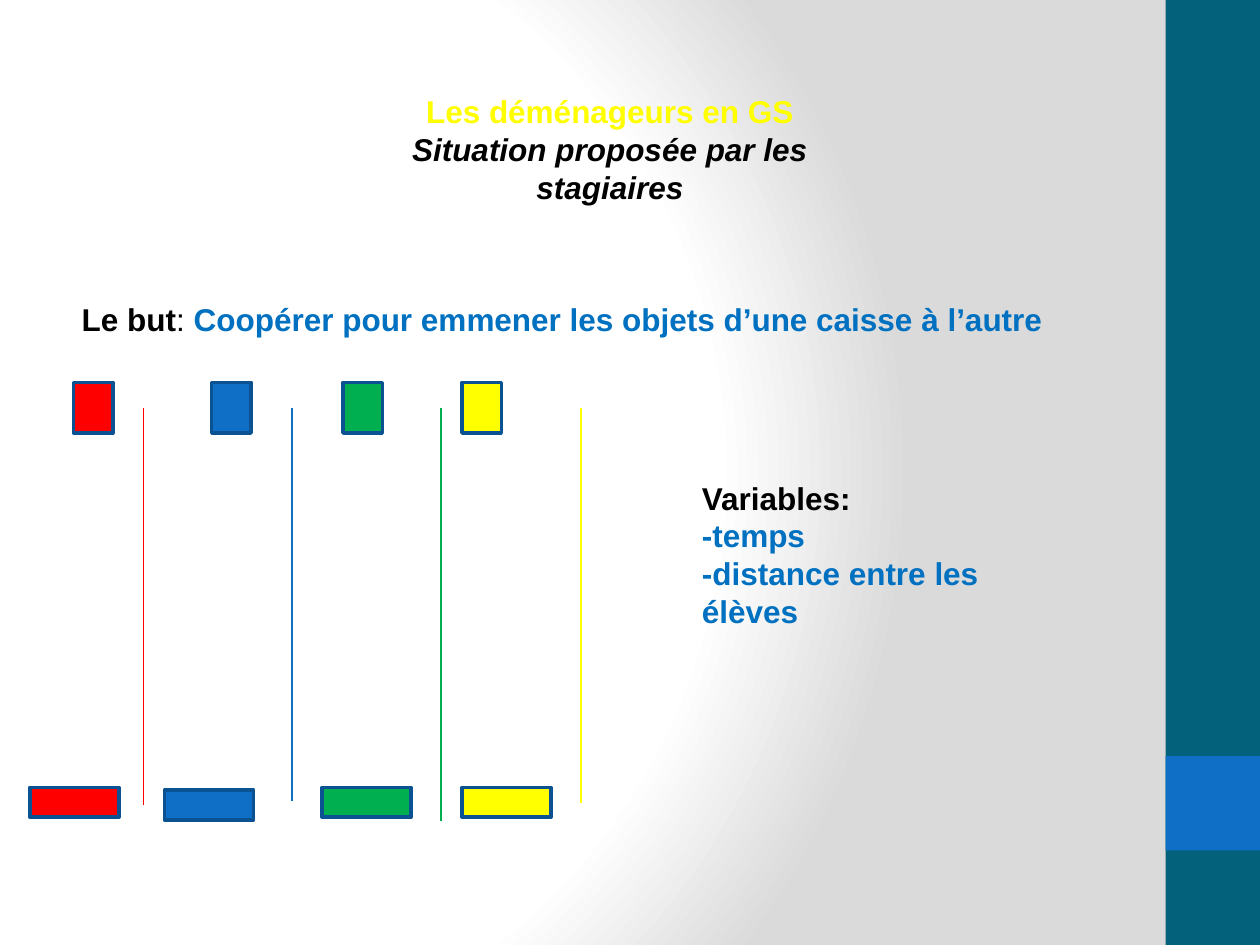
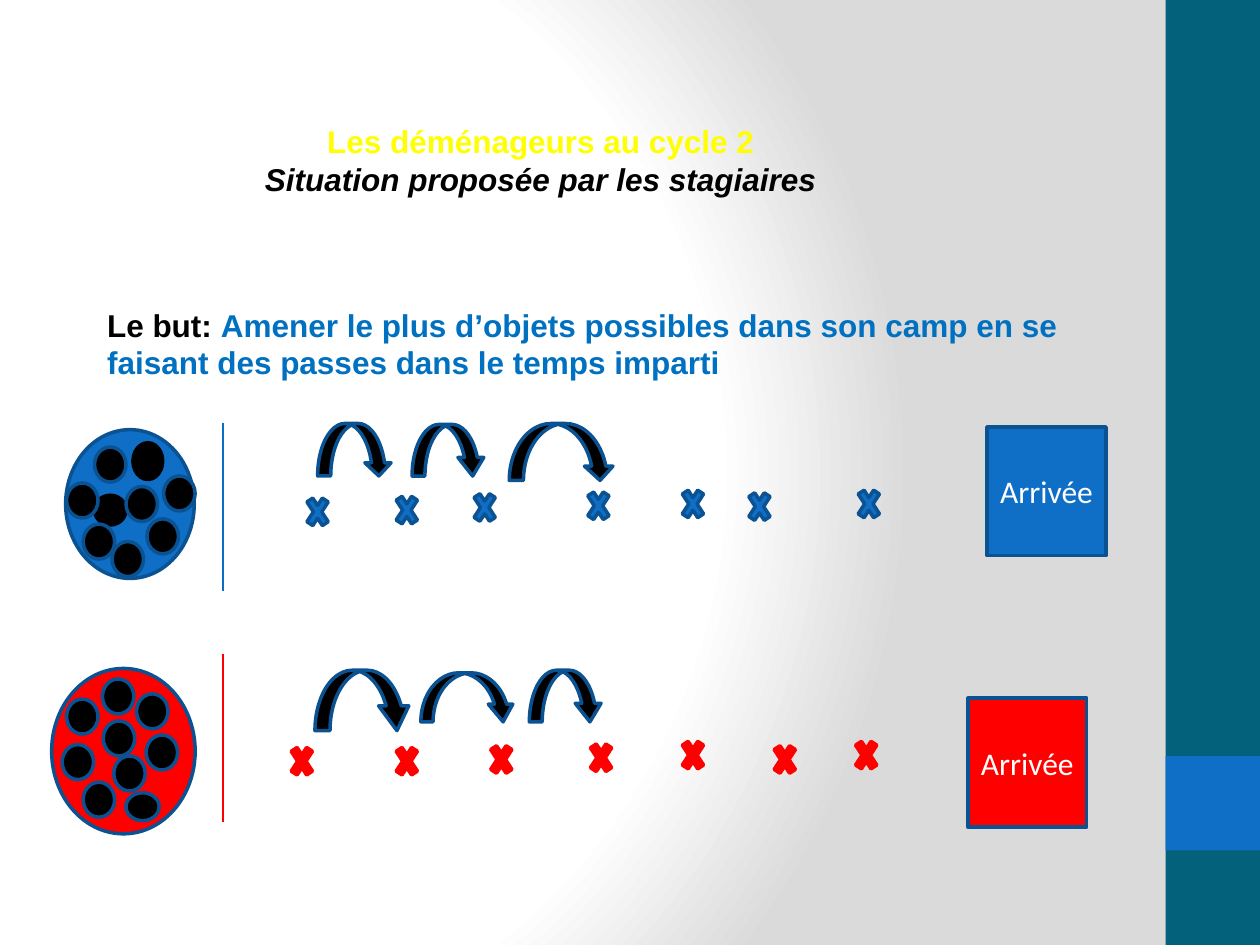
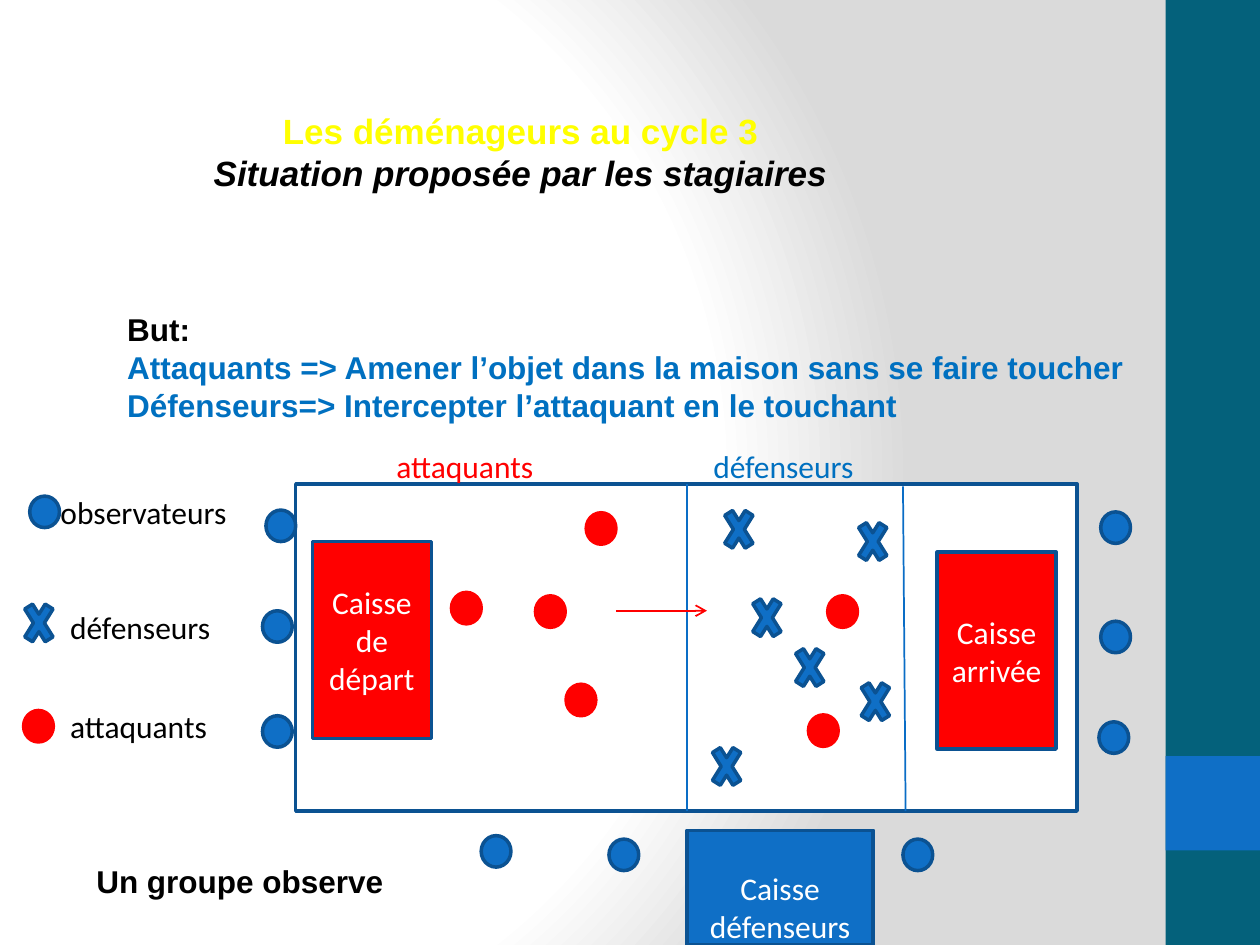
from dataclasses import dataclass, replace

from pptx import Presentation
from pptx.dml.color import RGBColor
from pptx.enum import shapes, text
from pptx.oxml import parse_xml
from pptx.oxml.ns import nsdecls, qn
from pptx.util import Pt

# Shared colours
TEAL = RGBColor(0x04, 0x61, 0x7B)
BLUE = RGBColor(0x0F, 0x6F, 0xC6)
LINE_BLUE = RGBColor(0x0A, 0x6D, 0xC6)
OUTLINE = RGBColor(0x0B, 0x52, 0x92)
TEXT_BLUE = RGBColor(0x00, 0x70, 0xC0)
RED = RGBColor(0xFF, 0x00, 0x00)
GREEN = RGBColor(0x00, 0xB0, 0x50)
YELLOW = RGBColor(0xFF, 0xFF, 0x00)
WHITE = RGBColor(0xFF, 0xFF, 0xFF)
BLACK = RGBColor(0x00, 0x00, 0x00)

BACKGROUND = f"""<a:gradFill {nsdecls('a')} rotWithShape="1"><a:gsLst>
<a:gs pos="0"><a:srgbClr val="FFFFFF"/></a:gs>
<a:gs pos="75000"><a:srgbClr val="FFFFFF"/></a:gs>
<a:gs pos="100000"><a:srgbClr val="DADADA"/></a:gs></a:gsLst>
<a:path path="circle"><a:fillToRect l="20000" t="50000" r="100000" b="50000"/></a:path>
</a:gradFill>"""

KIND = shapes.MSO_SHAPE
CENTER = text.PP_ALIGN.CENTER
SUBTITLE = "Situation proposée par les stagiaires"


@dataclass(frozen=True)
class Style:
    color: RGBColor
    font: str = "Arial"
    size: int = 18
    bold: bool = True
    italic: bool = False


STRONG = Style(BLACK)
GOAL = Style(TEXT_BLUE)
LABEL = Style(BLACK, "Calibri", bold=False)
BOX_LABEL = replace(LABEL, color=WHITE)


# Text
def write(frame, lines, align=text.PP_ALIGN.LEFT, anchor=text.MSO_ANCHOR.TOP):
    """Fill a frame; each line is a list of (words, style) runs."""
    frame.word_wrap = True
    frame.auto_size = text.MSO_AUTO_SIZE.NONE
    frame.vertical_anchor = anchor
    for number, line in enumerate(lines):
        paragraph = frame.add_paragraph() if number else frame.paragraphs[0]
        paragraph.alignment = align
        paragraph.space_before = Pt(0)
        for words, style in line:
            run = paragraph.add_run()
            run.text = words
            run.font.name, run.font.size = style.font, Pt(style.size)
            run.font.bold, run.font.italic = style.bold, style.italic
            run.font.color.rgb = style.color


def place(placeholder, box):
    (placeholder.left, placeholder.top,
     placeholder.width, placeholder.height) = map(Pt, box)


def add_title(slide, heading, box, size=18):
    place(slide.shapes.title, box)
    lines = [[(heading, Style(YELLOW, size=size))],
             [(SUBTITLE, Style(BLACK, size=size, italic=True))]]
    write(slide.shapes.title.text_frame, lines, CENTER)


def add_goal(slide, lines, box):
    goal = slide.placeholders[1]
    place(goal, box)
    write(goal.text_frame, lines)
    for paragraph in goal.text_frame.paragraphs:
        properties = paragraph._p.get_or_add_pPr()
        properties.set("marL", "0")
        properties.set("indent", "0")
        properties.append(parse_xml(f"<a:buNone {nsdecls('a')}/>"))


def add_note(slide, lines, box):
    write(slide.shapes.add_textbox(*map(Pt, box)).text_frame, lines)


# Shapes
def add_figure(slide, kind, box, fill, line=OUTLINE):
    figure = slide.shapes.add_shape(kind, *map(Pt, box))
    figure.shadow.inherit = False
    figure.fill.solid()
    figure.fill.fore_color.rgb = fill
    if line is None:
        figure.line.fill.background()
    else:
        figure.line.color.rgb = line
        figure.line.width = Pt(2)
    return figure


def add_group(slide, kind, size, corners, fill, line=OUTLINE):
    for corner in corners:
        add_figure(slide, kind, (*corner, *size), fill, line)


def add_crate(slide, box, fill, words):
    crate = add_figure(slide, KIND.RECTANGLE, box, fill)
    write(crate.text_frame, [[(word, BOX_LABEL)] for word in words],
          CENTER, text.MSO_ANCHOR.MIDDLE)
    return crate


def add_line(slide, start, end, color, arrow=False):
    line = slide.shapes.add_connector(
        shapes.MSO_CONNECTOR.STRAIGHT, *map(Pt, (*start, *end)))
    line.line.color.rgb = color
    line.line.width = Pt(1)
    properties = line.element.find(qn("p:spPr"))
    properties.append(parse_xml(f"<a:effectLst {nsdecls('a')}/>"))
    if arrow:
        line.line._get_or_add_ln().append(
            parse_xml(f'<a:tailEnd {nsdecls("a")} type="arrow"/>'))


def add_pass(slide, box, head=0.25):
    arc = add_figure(slide, KIND.CURVED_DOWN_ARROW, box, BLACK)
    arc.adjustments[2] = head


# Background and side bands, on the master
def dress_master(deck, slide):
    master = deck.slide_master
    master.background.fill.solid()
    backdrop = master.element.xpath("p:cSld/p:bg/p:bgPr")[0]
    backdrop.replace(backdrop[0], parse_xml(BACKGROUND))
    tree = master.element.xpath("p:cSld/p:spTree")[0]
    bands = (((666, 0, 54, 540), TEAL), ((666, 432, 54, 54), BLUE))
    for number, (box, color) in enumerate(bands):
        band = add_figure(slide, KIND.RECTANGLE, box, color, None).element
        band.xpath("p:nvSpPr/p:cNvPr")[0].set("id", str(100 + number))
        tree.insert(2 + number, band)


def nursery_slide(slide):
    add_title(slide, "Les déménageurs en GS", (184.5, 49, 328, 73))
    add_goal(slide, [[("Le but", STRONG), (": ", replace(STRONG, bold=False)),
                      ("Coopérer pour emmener les objets d’une caisse à l’autre", GOAL)]],
             (39.5, 168, 618, 29))
    # Lanes: colour, start crate x, end crate x and y, divider x and bottom
    lanes = ((RED, 42, 17, 450, 82, 460), (BLUE, 121, 94, 451.5, 167, 458),
             (GREEN, 196, 184, 450, 252, 469), (YELLOW, 264, 264, 450, 332, 459))
    for color, start_x, end_x, end_y, divider_x, bottom in lanes:
        add_figure(slide, KIND.RECTANGLE, (start_x, 218.5, 22.5, 29), color)
        add_figure(slide, KIND.RECTANGLE, (end_x, end_y, 51, 17), color)
        add_line(slide, (divider_x, 233), (divider_x, bottom), color)
    add_note(slide, [[("Variables:", STRONG)], [("-temps", GOAL)],
                     [("-distance entre les élèves", GOAL)]], (394, 270, 215, 94))


def cycle_two_slide(slide):
    add_title(slide, "Les déménageurs au cycle 2", (136.5, 66, 345, 51))
    add_goal(slide, [[("Le but: ", STRONG),
                      ("Amener le plus d’objets possibles dans son camp en se "
                       "faisant des passes dans le temps imparti", GOAL)]],
             (54, 171, 578, 51))
    # Arrival camps, reserves and start lines
    add_crate(slide, (564, 244, 68, 73.5), BLUE, ["Arrivée"])
    add_crate(slide, (553, 399, 68, 73.5), RED, ["Arrivée"])
    add_figure(slide, KIND.OVAL, (37.5, 245.5, 73.5, 85), BLUE)
    add_figure(slide, KIND.OVAL, (29.5, 382, 82, 94.5), RED)
    add_line(slide, (127.5, 242), (127.5, 338), LINE_BLUE)
    add_line(slide, (127.5, 374), (127.5, 470), RED)
    # Objects in the reserves
    for box in ((76, 253, 17, 21), (54, 283, 18, 17)):
        add_figure(slide, KIND.OVAL, box, BLACK, BLACK)
    blue_objects = ((84, 296.5), (64, 309.5), (38, 276), (93.5, 272),
                    (47.5, 299.5), (72, 278), (54, 255.5))
    red_objects = ((65, 432), (38, 399.5), (58.5, 388), (83.5, 420),
                   (47.5, 447), (59, 412), (78, 396.5), (35.5, 425.5))
    add_group(slide, KIND.OVAL, (18, 20), blue_objects + red_objects, BLACK)
    add_figure(slide, KIND.OVAL, (72, 453, 19, 16), BLACK)
    # Players
    blue_players = ((173, 279.5), (224, 278.5), (268.5, 277), (333.5, 276),
                    (387.5, 275), (425.5, 276.5), (488, 275))
    red_players = ((164, 422), (224, 422), (278, 421), (335, 420),
                   (387.5, 418.5), (440, 421), (486.5, 418.5))
    add_group(slide, KIND.MATH_MULTIPLY, (17, 26), blue_players, BLUE)
    add_group(slide, KIND.MATH_MULTIPLY, (17, 26), red_players, RED, RED)
    # Passes
    add_pass(slide, (181.5, 242, 42.5, 30))
    add_pass(slide, (235.5, 242.5, 42, 29.5), 0.36)
    add_pass(slide, (291, 242, 60, 32.5))
    add_pass(slide, (180, 383, 55.5, 34.5), 0.41)
    add_pass(slide, (240.5, 384.5, 54, 28), 0.36)
    add_pass(slide, (302.5, 383, 42, 29.5), 0.36)


def cycle_three_slide(slide):
    add_title(slide, "Les déménageurs au cycle 3", (99, 59, 397, 55), 20)
    add_goal(slide, [
        [("But:", STRONG)],
        [("Attaquants => Amener l’objet dans la maison sans se faire toucher", GOAL)],
        [("Défenseurs=> Intercepter l’attaquant en le touchant", GOAL)],
    ], (65.5, 173.5, 590, 73))
    # Field
    add_figure(slide, KIND.RECTANGLE, (169, 276.5, 446.5, 187), WHITE)
    add_line(slide, (392.5, 276.5), (392.5, 463.5), LINE_BLUE)
    add_line(slide, (516, 278), (517.5, 463.5), LINE_BLUE)
    add_line(slide, (352, 349), (404, 349), RED, arrow=True)
    add_crate(slide, (178.5, 309.5, 68, 112.5), RED, ["Caisse", "de", "départ"])
    add_crate(slide, (535.5, 315.5, 68, 112.5), RED, ["Caisse", "arrivée"])
    defence = add_crate(slide, (392.5, 474.5, 106.5, 65.5), BLUE, ["Caisse défenseurs"])
    defence.text_frame.vertical_anchor = text.MSO_ANCHOR.TOP
    defence.text_frame.margin_top = Pt(22)
    defence.text_frame.margin_bottom = Pt(0)
    # People; the first of each group belongs to the legend
    observers = ((17, 283.5), (152, 291.5), (150, 349), (150, 409), (275, 477.5),
                 (348, 479.5), (516, 479.5), (629, 292.5), (629, 355), (628, 412.5))
    defenders = ((11, 338), (411, 284.5), (487.5, 291.5), (427, 335),
                 (451.5, 363.5), (489, 383), (404, 420))
    attackers = ((13.5, 406), (258, 338.5), (306, 340.5), (335, 293),
                 (323.5, 391), (473, 340.5), (462, 408.5))
    dot = KIND.FLOWCHART_CONNECTOR
    add_group(slide, dot, (17, 18), observers, BLUE)
    add_group(slide, KIND.MATH_MULTIPLY, (22.5, 36), defenders, BLUE)
    add_group(slide, dot, (17, 18), attackers, RED, RED)
    # Legend and field labels
    captions = (("observateurs", LABEL, (27.5, 278, 113, 29)),
                ("défenseurs", LABEL, (33, 344, 102, 29)),
                ("attaquants", LABEL, (33, 400.5, 96, 29)),
                ("attaquants", replace(LABEL, color=RED), (219.5, 252, 136, 29)),
                ("défenseurs", replace(LABEL, color=TEXT_BLUE), (400.5, 252, 99, 29)),
                ("Un groupe observe", STRONG, (48, 489, 329, 29)))
    for words, style, box in captions:
        add_note(slide, [[(words, style)]], box)


def main():
    deck = Presentation()
    deck.slide_width, deck.slide_height = Pt(720), Pt(540)
    pages = (nursery_slide, cycle_two_slide, cycle_three_slide)
    for number, build in enumerate(pages):
        slide = deck.slides.add_slide(deck.slide_layouts[1])
        if number == 0:
            dress_master(deck, slide)
        build(slide)
    deck.save("out.pptx")


if __name__ == "__main__":
    main()
